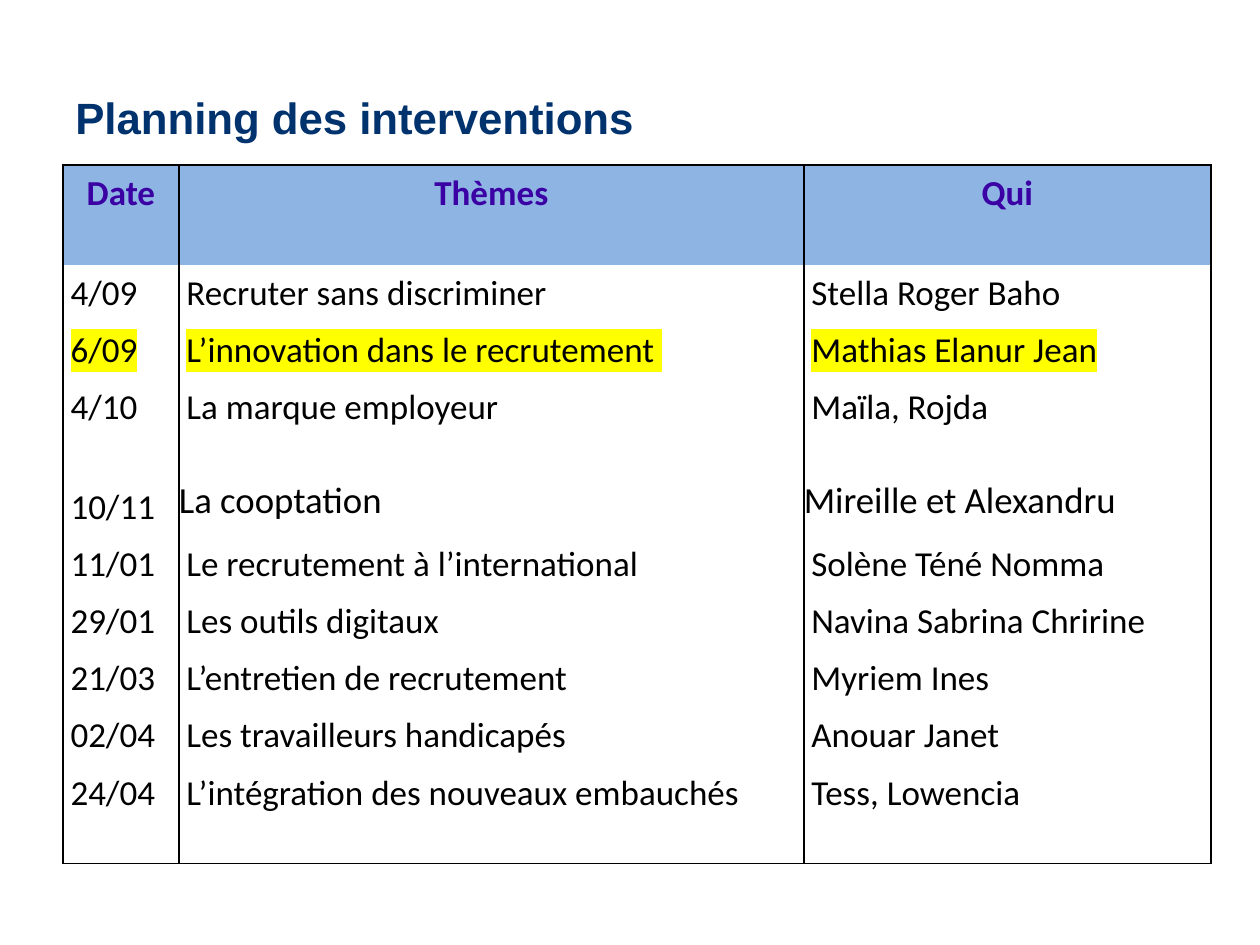
from lxml.etree import SubElement
from pptx import Presentation
from pptx.dml.color import RGBColor
from pptx.enum.text import MSO_ANCHOR, PP_ALIGN
from pptx.oxml.ns import qn
from pptx.util import Inches, Pt

TITLE = "Planning des interventions"
HEADERS = ("Date", "Thèmes", "Qui")
SESSIONS = [
    ("4/09", "Recruter sans discriminer", "Stella Roger Baho"),
    ("6/09", "L’innovation dans le recrutement ", "Mathias Elanur Jean"),
    ("4/10", "La marque employeur", "Maïla, Rojda"),
    ("10/11", "La cooptation", "Mireille et Alexandru"),
    ("11/01", "Le recrutement à l’international", "Solène Téné Nomma"),
    ("29/01", "Les outils digitaux", "Navina Sabrina Chririne"),
    ("21/03", "L’entretien de recrutement", "Myriem Ines"),
    ("02/04", "Les travailleurs handicapés", "Anouar Janet"),
    ("24/04", "L’intégration des nouveaux embauchés", "Tess, Lowencia"),
]
COLORS = {
    "title": "00326E",
    "header_text": "3B00A4",
    "header_fill": "8EB4E3",
    "text": "000000",
    "border": "000000",
    "highlight": "FFFF00",
}
COLUMN_WIDTHS = (0.92, 4.96, 3.23)
ROW_HEIGHT, TALL_ROW_HEIGHT = 0.45, 0.79
TALL_ROWS = (0, 3, len(SESSIONS))
HIGHLIGHTED_ROW = 2
FLUSH_ROW = 4  # themes and names without cell margins, slightly larger
CELL_MARGIN = 0.06


def set_font(paragraph, name, size, color, bold=False):
    font = paragraph.font
    font.name, font.size, font.bold = name, Pt(size), bold
    font.color.rgb = RGBColor.from_string(COLORS[color])


def set_borders(cell, visible_sides):
    properties = cell._tc.get_or_add_tcPr()
    for side in "LRTB":
        line = SubElement(properties, qn(f"a:ln{side}"), w=str(Pt(1)))
        if side in visible_sides:
            fill = SubElement(line, qn("a:solidFill"))
            SubElement(fill, qn("a:srgbClr"), val=COLORS["border"])
        else:
            SubElement(line, qn("a:noFill"))


def highlight(run):
    mark = SubElement(run._r.get_or_add_rPr(), qn("a:highlight"))
    SubElement(mark, qn("a:srgbClr"), val=COLORS["highlight"])


def fill_cell(cell, text, row, column):
    is_header = row == 0
    is_flush = row == FLUSH_ROW and column > 0
    margin = Inches(0 if is_flush else CELL_MARGIN)
    cell.margin_left = cell.margin_right = margin
    cell.margin_top = cell.margin_bottom = margin

    # Outer frame and column rules only
    last_row = row == len(SESSIONS)
    set_borders(cell, "LR" + "T" * is_header + "B" * last_row)
    if is_header:
        cell.fill.solid()
        cell.fill.fore_color.rgb = RGBColor.from_string(COLORS["header_fill"])
    else:
        cell.fill.background()

    paragraph = cell.text_frame.paragraphs[0]
    run = paragraph.add_run()
    run.text = text
    paragraph.alignment = PP_ALIGN.CENTER if is_header else PP_ALIGN.LEFT
    set_font(paragraph, "Calibri", 21 if is_flush else 20,
             "header_text" if is_header else "text", is_header)
    if row == HIGHLIGHTED_ROW:
        highlight(run)


presentation = Presentation()
presentation.slide_width, presentation.slide_height = Inches(10), Inches(7.5)
slide = presentation.slides.add_slide(presentation.slide_layouts[6])

# Title
title = slide.shapes.add_textbox(Inches(0.5), Inches(0.3), Inches(9), Inches(1.25))
title.text_frame.word_wrap = True
title.text_frame.vertical_anchor = MSO_ANCHOR.MIDDLE
title_paragraph = title.text_frame.paragraphs[0]
title_paragraph.text = TITLE
set_font(title_paragraph, "Arial", 25, "title", True)

# Schedule table
rows = [HEADERS, *SESSIONS]
heights = [TALL_ROW_HEIGHT if row in TALL_ROWS else ROW_HEIGHT for row in range(len(rows))]
table = slide.shapes.add_table(
    len(rows), len(HEADERS), Inches(0.5), Inches(1.31),
    Inches(sum(COLUMN_WIDTHS)), Inches(sum(heights))).table
table.first_row = table.horz_banding = False
for column, width in zip(table.columns, COLUMN_WIDTHS):
    column.width = Inches(width)
for row_index, (values, height) in enumerate(zip(rows, heights)):
    table.rows[row_index].height = Inches(height)
    for column_index, value in enumerate(values):
        fill_cell(table.cell(row_index, column_index), value, row_index, column_index)

presentation.save("out.pptx")
